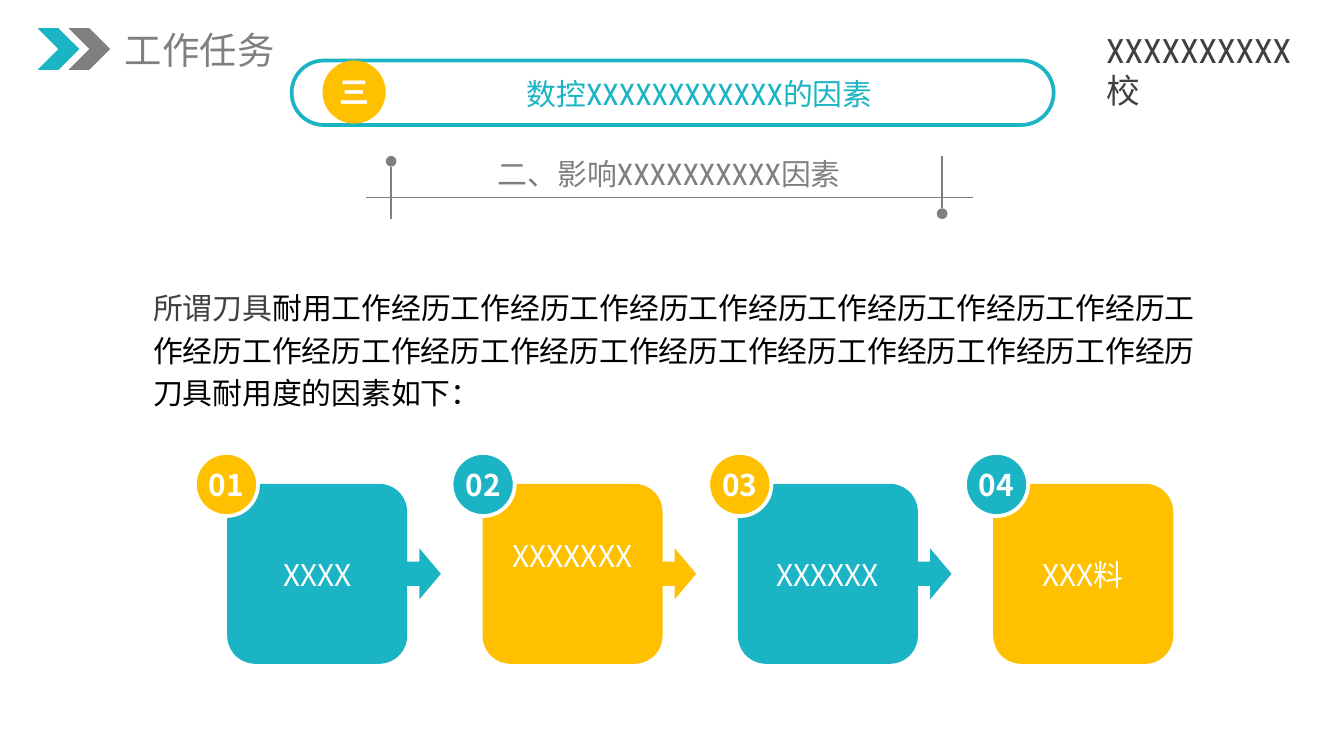
from math import cos, radians, sin

from lxml.etree import SubElement
from pptx import Presentation
from pptx.dml.color import RGBColor
from pptx.enum.shapes import MSO_CONNECTOR, MSO_SHAPE as SHAPE
from pptx.enum.text import MSO_ANCHOR as ANCHOR, MSO_AUTO_SIZE, PP_ALIGN as ALIGN
from pptx.oxml.ns import qn
from pptx.util import Emu, Pt

TEAL, AMBER, GRAY, DARK, WHITE = "1AB4C4", "FFC000", "7F7F7F", "404040", "FFFFFF"
NOTO, ROBOTO = "Noto Sans CJK SC", "Roboto Condensed"


def px(n):
    return Emu(round(n * 9144))


def rgb(color):
    return RGBColor.from_string(color)


def write(sp, runs, size, font, align=ALIGN.LEFT, bold=False, inset=(0, 0),
          anchor=ANCHOR.TOP, wrap=True, spacing=None):
    tf = sp.text_frame
    tf.auto_size = MSO_AUTO_SIZE.NONE
    tf.word_wrap = wrap
    tf.vertical_anchor = anchor
    tf.margin_left = tf.margin_right = px(inset[0])
    tf.margin_top = tf.margin_bottom = px(inset[1])
    p = tf.paragraphs[0]
    p.alignment = align
    if spacing:
        p.line_spacing = Pt(spacing)
    p.font.size, p.font.bold, p.font.name = Pt(size), bold, font
    if len(runs) == 1:
        p.font.color.rgb = rgb(runs[0][1])
    for text, color in runs:
        r = p.add_run()
        r.text = text
        if len(runs) > 1:
            r.font.color.rgb = rgb(color)
    SubElement(p._p.pPr.find(qn("a:defRPr")), qn("a:ea"), typeface=font)


def add_text(s, x, y, w, h, runs, size, font, **options):
    sp = s.shapes.add_textbox(px(x), px(y), px(w), px(h))
    write(sp, runs, size, font, **options)


def paint(sp, fill, line=None, width=2):
    sp.shadow.inherit = False
    sp.fill.solid()
    sp.fill.fore_color.rgb = rgb(fill)
    if line:
        sp.line.color.rgb = rgb(line)
        sp.line.width = Pt(width)
    else:
        sp.line.fill.background()


def add_shape(s, kind, x, y, w, h, fill, line=None):
    sp = s.shapes.add_shape(kind, px(x), px(y), px(w), px(h))
    paint(sp, fill, line)
    return sp


def add_line(s, x1, y1, x2, y2):
    cx = s.shapes.add_connector(MSO_CONNECTOR.STRAIGHT, px(x1), px(y1), px(x2), px(y2))
    cx.line.color.rgb = rgb(GRAY)
    cx.line.width = Pt(0.75)
    SubElement(cx._element.spPr, qn("a:effectLst"))


def add_disc(s, x, y, text, fill, font, line=None):
    sp = add_shape(s, SHAPE.OVAL, x, y, 47, 47, fill, line)
    write(sp, [(text, WHITE)], 16, font, align=ALIGN.CENTER, bold=True,
          anchor=ANCHOR.MIDDLE, wrap=False)


def add_header(s, x, y):
    for dx, color in ((0, TEAL), (23, GRAY)):
        add_shape(s, SHAPE.CHEVRON, x + dx, y, 31, 31, color)
    title = s.shapes.title
    title.left, title.top, title.width, title.height = px(x + 55), px(y - 6), px(133), px(44)
    write(title, [("工作任务", "808080")], 20, NOTO, inset=(10, 5), wrap=False)
    add_text(s, x + 795, y + 1, 146, 60, [("XXXXXXXXXX校", DARK)], 18, ROBOTO)


def add_banner(s, x, y, w, h):
    pill = add_shape(s, SHAPE.ROUNDED_RECTANGLE, x, y, w, h, WHITE, TEAL)
    pill.adjustments[0] = 0.5
    add_text(s, x + 57, y + 11, 493, 27, [("数控XXXXXXXXXXXX的因素", TEAL)], 16, ROBOTO,
             align=ALIGN.CENTER)
    add_disc(s, x + 23, y, "三", AMBER, "Arial")


def add_subtitle(s, x, y, w):
    add_line(s, x, y + 31, x + w, y + 31)
    for pin_x, line_y, dot_y in ((x + 19, y + 8, y), (x + 429, y, y + 39)):
        add_line(s, pin_x, line_y, pin_x, line_y + 39)
        add_shape(s, SHAPE.OVAL, pin_x - 4, dot_y, 8, 8, GRAY)
    add_text(s, x + 36, y, 380, 27, [("二、影响XXXXXXXXXX因素", GRAY)], 16, ROBOTO,
             align=ALIGN.CENTER)


def add_intro(s, x, y, w, h):
    body = "耐用" + "工作经历" * 16 + "刀具耐用度的因素如下："
    add_text(s, x, y, w, h, [("所谓刀具", DARK), (body, "000000")], 16, NOTO, spacing=23)


def card_outline(x, y, side, radius, arrow):
    near, far = radius, side - radius
    points = []
    for cx, cy, start in ((near, near, 180), (far, near, 270), (far, far, 0), (near, far, 90)):
        if arrow and start == 0:
            mid = side / 2
            points += [(side, mid - 9), (side + 9, mid - 9), (side + 9, mid - 19),
                       (side + 25, mid),
                       (side + 9, mid + 19), (side + 9, mid + 9), (side, mid + 9)]
        for step in range(10):
            angle = radians(start + step * 10)
            points.append((cx + radius * cos(angle), cy + radius * sin(angle)))
    return [(px(x + dx), px(y + dy)) for dx, dy in points]


def add_card(s, x, y, text, text_dy, fill, arrow):
    points = card_outline(x, y, 134, 21, arrow)
    builder = s.shapes.build_freeform(*points[0])
    builder.add_line_segments(points[1:], close=True)
    paint(builder.convert_to_shape(), fill)
    add_text(s, x + 16, y + text_dy, 102, 27, [(text, WHITE)], 16, NOTO, align=ALIGN.CENTER)


def add_factors(s, x, y):
    factors = (("XXXX", 54), ("XXXXXXX", 40), ("XXXXXX", 54), ("XXX料", 54))
    for i, (text, text_dy) in enumerate(factors):
        fill, accent = (TEAL, AMBER) if i % 2 == 0 else (AMBER, TEAL)
        add_card(s, x + 24 + 190 * i, y + 23, text, text_dy, fill, i < len(factors) - 1)
        add_disc(s, x + 191 * i, y, f"{i + 1:02}", accent, NOTO, WHITE)


def main():
    prs = Presentation()
    prs.slide_width = px(1000)
    prs.slide_height = px(562.5)
    s = prs.slides.add_slide(prs.slide_layouts[5])
    add_header(s, 28, 21)
    add_banner(s, 217, 45, 567, 48)
    add_subtitle(s, 272, 116, 452)
    add_intro(s, 114, 210, 787, 94)
    add_factors(s, 145, 337)
    prs.save("out.pptx")


if __name__ == "__main__":
    main()
